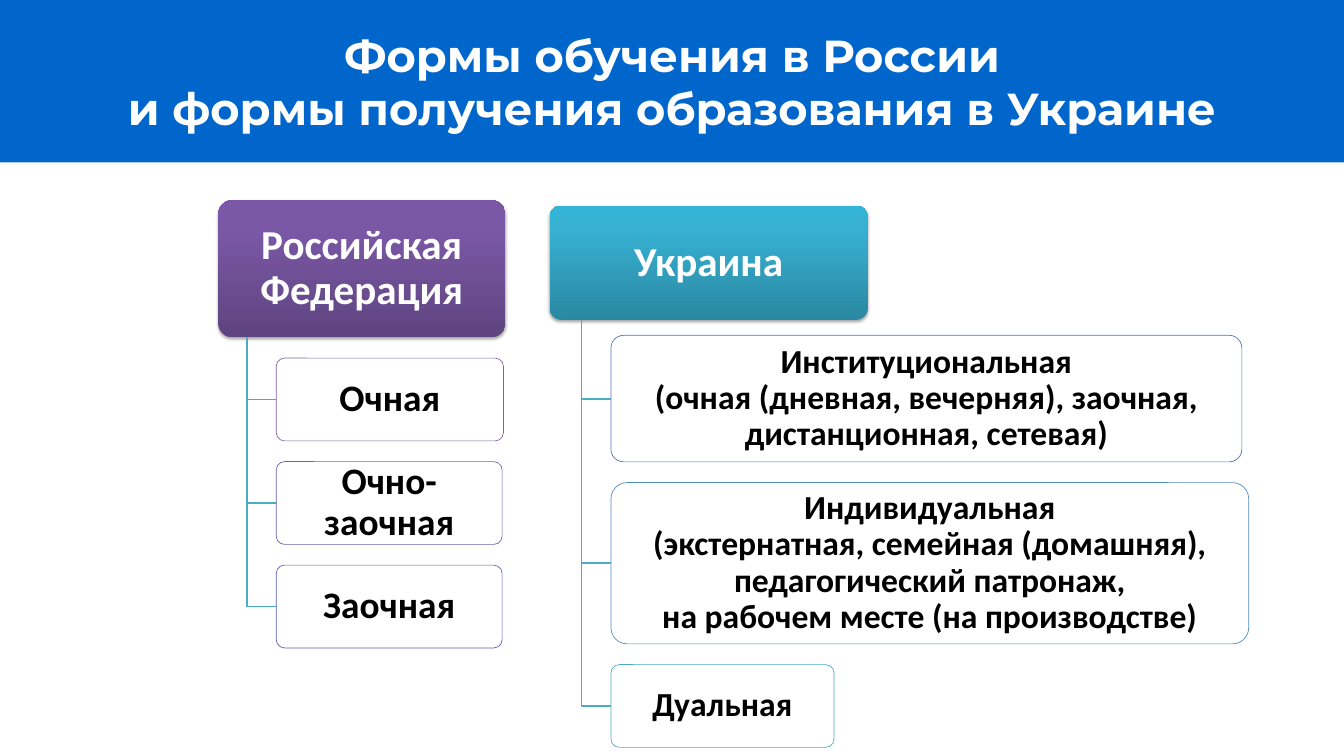
from copy import deepcopy
from dataclasses import dataclass

from lxml import etree
from pptx import Presentation
from pptx.dml.color import RGBColor
from pptx.enum.shapes import MSO_SHAPE
from pptx.enum.text import MSO_ANCHOR, MSO_AUTO_SIZE, PP_ALIGN
from pptx.oxml.ns import qn
from pptx.util import Pt


@dataclass(frozen=True)
class Theme:
    banner: str = "0066CC"
    white: str = "FFFFFF"
    black: str = "000000"
    link: str = "4BACC6"
    purple: tuple = ((0, "5F4480"), (0.8, "7B58A6"), (1, "7C57A8"))
    teal: tuple = ((0, "2A88A2"), (0.8, "37B1D2"), (1, "34B4D6"))
    title_font: str = "Montserrat"
    body_font: str = "Calibri"
    title_size: int = 48
    head_size: int = 44
    russia_size: int = 40
    ukraine_size: int = 36


THEME = Theme()
GAP = 22.2  # between stacked boxes


def rgb(value):
    return RGBColor.from_string(value)


def set_text(sp, lines, *, size, color, font=THEME.body_font, spacing=0.9, inset=8):
    tf = sp.text_frame
    tf.word_wrap = True
    tf.auto_size = MSO_AUTO_SIZE.NONE
    tf.vertical_anchor = MSO_ANCHOR.MIDDLE
    tf.margin_left = tf.margin_right = tf.margin_top = tf.margin_bottom = Pt(inset)
    for i, line in enumerate(lines):
        p = tf.add_paragraph() if i else tf.paragraphs[0]
        p.alignment = PP_ALIGN.CENTER
        p.line_spacing = spacing
        r = p.add_run()
        r.text = line
        r.font.name = font
        r.font.size = Pt(size)
        r.font.bold = True
        r.font.color.rgb = rgb(color)


def add_title(s, lines):
    sp = s.shapes.title
    sp.left, sp.top, sp.width, sp.height = Pt(0), Pt(0), Pt(1440), Pt(174)
    sp.fill.solid()
    sp.fill.fore_color.rgb = rgb(THEME.banner)
    set_text(sp, lines, size=THEME.title_size, color=THEME.white,
             font=THEME.title_font, spacing=1.0, inset=0)


def add_round_box(s, left, top, width, height):
    sp = s.shapes.add_shape(MSO_SHAPE.ROUNDED_RECTANGLE,
                            Pt(left), Pt(top), Pt(width), Pt(height))
    sp.adjustments[0] = 0.1
    sp.shadow.inherit = False
    return sp


def fill_gradient(sp, stops):
    """Fill from the bottom up with three or more stops."""
    sp.fill.gradient()
    sp.fill.gradient_angle = 90
    gs_list = sp.fill._fill._gradFill.find(qn("a:gsLst"))
    while len(gs_list) < len(stops):
        gs_list.append(deepcopy(gs_list[-1]))
    for stop, (position, color) in zip(sp.fill.gradient_stops, stops):
        stop.position = position
        stop.color.rgb = rgb(color)


def add_shadow(sp):
    effects = sp.element.spPr.find(qn("a:effectLst"))
    shadow = etree.SubElement(effects, qn("a:outerShdw"), blurRad=str(Pt(3.1)),
                              dist=str(Pt(1.8)), dir="5400000", rotWithShape="0")
    color = etree.SubElement(shadow, qn("a:srgbClr"), val=THEME.black)
    etree.SubElement(color, qn("a:alpha"), val="35000")


def add_head(s, box, lines, stops):
    sp = add_round_box(s, *box)
    fill_gradient(sp, stops)
    sp.line.fill.background()
    add_shadow(sp)
    set_text(sp, lines, size=THEME.head_size, color=THEME.white)


def add_form(s, box, lines, outline, size):
    sp = add_round_box(s, *box)
    sp.fill.solid()
    sp.fill.fore_color.rgb = rgb(THEME.white)
    color = sp.element.spPr.find(qn("a:solidFill"))[0]
    etree.SubElement(color, qn("a:alpha"), val="90000")
    sp.line.color.rgb = rgb(outline)
    sp.line.width = Pt(0.75)
    set_text(sp, lines, size=size, color=THEME.black)


def add_branch(s, x, top, right, bottom):
    """Draw a line down from the head and across to a form."""
    builder = s.shapes.build_freeform(Pt(x), Pt(top))
    builder.add_line_segments([(Pt(x), Pt(bottom)), (Pt(right), Pt(bottom))], close=False)
    sp = builder.convert_to_shape()
    sp.shadow.inherit = False
    sp.fill.background()
    sp.line.color.rgb = rgb(THEME.link)
    sp.line.width = Pt(2)


def add_country(s, head, lines, stops, forms, *, form_left, first_gap, size):
    """Stack the forms under the country head; each is width, height, outline, lines."""
    left, top, width, height = head
    add_head(s, head, lines, stops)
    bottom = top + height
    y = bottom + first_gap
    for form_width, form_height, outline, form_lines in forms:
        add_branch(s, left + width / 10, bottom, form_left, y + form_height / 2)
        add_form(s, (form_left, y, form_width, form_height), form_lines, outline, size)
        y += form_height + GAP


def main():
    prs = Presentation()
    prs.slide_width, prs.slide_height = Pt(1440), Pt(810)
    s = prs.slides.add_slide(prs.slide_layouts[5])
    add_title(s, ["Формы обучения в России", "и формы получения образования в Украине"])

    add_country(
        s, (234, 214.6, 307.4, 146.9), ["Российская", "Федерация"], THEME.purple,
        [(243.4, 88.7, "8064A2", ["Очная"]),
         (242, 88.7, "6E5FA9", ["Очно-заочная"]),
         (242, 88.7, "5A5EB1", ["Заочная"])],
        form_left=296, first_gap=GAP, size=THEME.russia_size)

    add_country(
        s, (589, 220.3, 340.6, 122.4), ["Украина"], THEME.teal,
        [(676, 135.6, "5572B8",
          ["Институциональная",
           "(очная (дневная, вечерняя), заочная, дистанционная, сетевая)"]),
         (683.3, 172.8, "508CBF",
          ["Индивидуальная",
           "(экстернатная, семейная (домашняя), педагогический патронаж,",
           "на рабочем месте (на производстве)"]),
         (239, 88.7, "4BACC6", ["Дуальная"])],
        form_left=654.6, first_gap=16.6, size=THEME.ukraine_size)

    prs.save("out.pptx")


if __name__ == "__main__":
    main()
